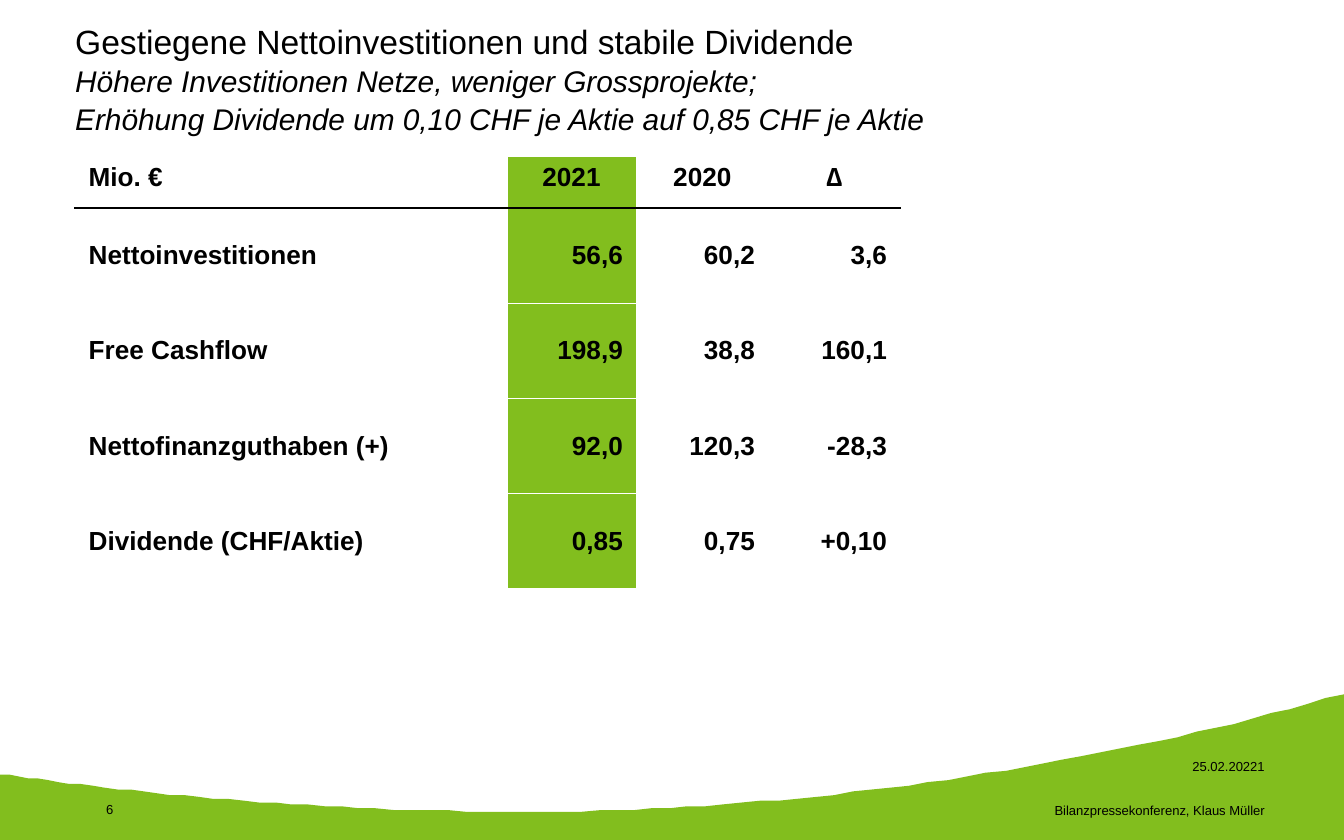
import pptx
import pptx.dml.color
import pptx.enum.text
import pptx.oxml
import pptx.oxml.ns
import pptx.util

Pt = pptx.util.Pt
ALIGN = pptx.enum.text.PP_ALIGN
ANCHOR = pptx.enum.text.MSO_ANCHOR
GREEN, BLACK, WHITE = "82BE1E", "000000", "FFFFFF"
FONT = "Arial"

FIGURES = [
    ("Mio. €", "2021", "2020", "∆"),
    ("Nettoinvestitionen", "56,6", "60,2", "3,6"),
    ("Free Cashflow", "198,9", "38,8", "160,1"),
    ("Nettofinanzguthaben (+)", "92,0", "120,3", "-28,3"),
    ("Dividende (CHF/Aktie)", "0,85", "0,75", "+0,10"),
]
HEADLINE = [
    ("Gestiegene Nettoinvestitionen und stabile Dividende", 18, False),
    ("Höhere Investitionen Netze, weniger Grossprojekte;", 16, True),
    ("Erhöhung Dividende um 0,10 CHF je Aktie auf 0,85 CHF je Aktie", 16, True),
]


def colour(hex_value):
    """Turn a hex string into a colour."""
    return pptx.dml.color.RGBColor.from_string(hex_value)


def set_font(font, size, bold=False):
    """Apply the deck's typeface in black."""
    font.name, font.size, font.bold = FONT, Pt(size), bold
    font.color.rgb = colour(BLACK)


def clear_margins(frame):
    """Remove the insets of a text frame and let it wrap."""
    frame.margin_left = frame.margin_right = Pt(0)
    frame.margin_top = frame.margin_bottom = Pt(0)
    frame.word_wrap = True


def bezier(start, first, second, end, steps=40):
    """Return points along a cubic curve, without its start."""
    points = []
    for step in range(1, steps + 1):
        t = step / steps
        weights = ((1 - t) ** 3, 3 * t * (1 - t) ** 2, 3 * t * t * (1 - t), t ** 3)
        corners = (start, first, second, end)
        points.append(tuple(sum(w * c[axis] for w, c in zip(weights, corners))
                            for axis in (0, 1)))
    return points


def add_wave(slide, left, top, width, height):
    """Draw the green wave along the foot of the slide."""
    def place(x, y):
        return left + x * width, top + y * height

    crest, trough, end = place(1, 0), place(0.447, 0.8), place(0, 0.55)
    outline = [place(1, 1), crest]
    outline += bezier(crest, place(0.822, 0.486), place(0.614, 0.761), trough)
    outline += bezier(trough, place(0.25, 0.844), place(0.085, 0.66), end)
    builder = slide.shapes.build_freeform(*place(0, 1), scale=Pt(1))
    builder.add_line_segments(outline, close=True)
    wave = builder.convert_to_shape()
    wave.shadow.inherit = False
    wave.fill.solid()
    wave.fill.fore_color.rgb = colour(GREEN)
    wave.line.fill.background()


def add_headline(slide, left, top, width, height):
    """Fill the title with the headline and its italic subtitle."""
    title = slide.shapes.title
    title.left, title.top, title.width, title.height = map(Pt, (left, top, width, height))
    frame = title.text_frame
    clear_margins(frame)
    frame.auto_size = pptx.enum.text.MSO_AUTO_SIZE.NONE
    frame.vertical_anchor = ANCHOR.TOP
    headline = frame.paragraphs[0]
    headline.alignment = ALIGN.LEFT
    headline.line_spacing = 1.05
    set_font(headline.font, 16)
    for index, (text, size, italic) in enumerate(HEADLINE):
        if index:
            headline.add_line_break()
        line = headline.add_run()
        line.text = text
        line.font.size, line.font.italic = Pt(size), italic


def add_note(slide, text, align, left, top, width, height):
    """Add one small footer text, resting on the bottom of its box."""
    note = slide.shapes.add_textbox(*map(Pt, (left, top, width, height)))
    frame = note.text_frame
    clear_margins(frame)
    frame.vertical_anchor = ANCHOR.BOTTOM
    paragraph = frame.paragraphs[0]
    paragraph.text, paragraph.alignment = text, align
    set_font(paragraph.font, 7)


def set_borders(cell, top, bottom):
    """Give a cell one-point borders, white at the sides."""
    properties = cell._tc.get_or_add_tcPr()
    edges = {"lnL": WHITE, "lnR": WHITE, "lnT": top, "lnB": bottom}
    for position, (tag, hex_value) in enumerate(edges.items()):
        properties.insert(position, pptx.oxml.parse_xml(
            f'<a:{tag} {pptx.oxml.ns.nsdecls("a")} w="12700"><a:solidFill>'
            f'<a:srgbClr val="{hex_value}"/></a:solidFill></a:{tag}>'))


def add_figures(slide, left, top, width, height):
    """Add the table of key figures with the current year in green."""
    frame = slide.shapes.add_table(len(FIGURES), len(FIGURES[0]),
                                   *map(Pt, (left, top, width, height)))
    table = frame.table
    table.first_row = table.horz_banding = False
    for column, share in zip(table.columns, (0.523, 0.157, 0.16, 0.16)):
        column.width = Pt(share * width)
    header_height = 28
    body_height = (height - header_height) / (len(FIGURES) - 1)
    for r, values in enumerate(FIGURES):
        table.rows[r].height = Pt(body_height if r else header_height)
        for c, value in enumerate(values):
            cell = table.cell(r, c)
            cell.vertical_anchor = ANCHOR.MIDDLE if r else ANCHOR.TOP
            cell.fill.solid()
            cell.fill.fore_color.rgb = colour(GREEN if c == 1 else WHITE)
            set_borders(cell, BLACK if r == 1 else WHITE, BLACK if r == 0 else WHITE)
            paragraph = cell.text_frame.paragraphs[0]
            paragraph.text = value
            if c:
                paragraph.alignment = ALIGN.RIGHT if r else ALIGN.CENTER
            set_font(paragraph.font, 14, bold=True)


def main():
    """Build the slide and save it."""
    deck = pptx.Presentation()
    deck.slide_width, deck.slide_height = Pt(720), Pt(450)
    slide = deck.slides.add_slide(deck.slide_layouts[5])
    add_wave(slide, 0, 371.5, 720, 78.5)
    add_headline(slide, 40.3, 10, 539.3, 65)
    add_note(slide, "6", ALIGN.LEFT, 56.9, 414, 63.4, 23.8)
    add_note(slide, "Bilanzpressekonferenz, Klaus Müller", ALIGN.RIGHT, 375.8, 414.7, 301.7, 23.8)
    add_note(slide, "25.02.20221", ALIGN.RIGHT, 535.7, 400.3, 141.8, 14.4)
    add_figures(slide, 40.3, 83.5, 442.1, 232)
    deck.save("out.pptx")


if __name__ == "__main__":
    main()
